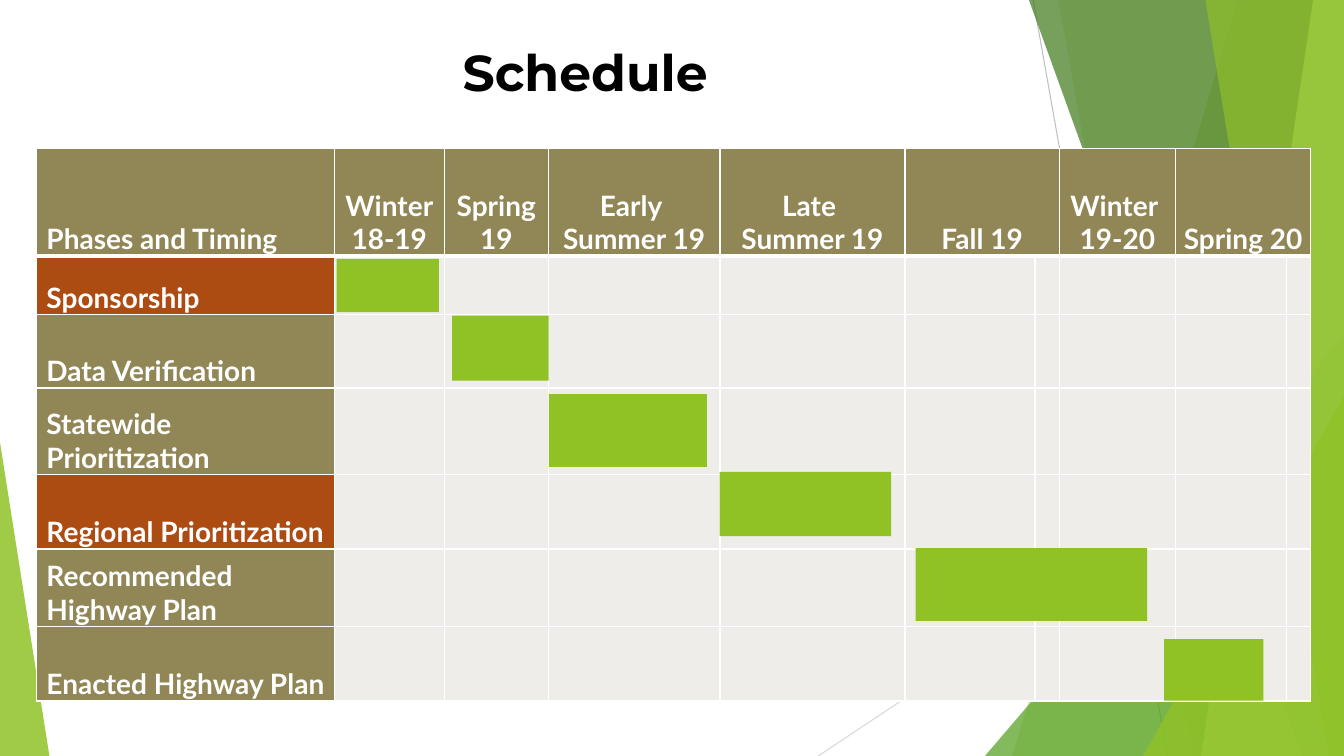
import pptx
import pptx.util
import pptx.dml.color
import pptx.enum.shapes
import pptx.enum.text
import pptx.oxml
import pptx.oxml.ns

Pt = pptx.util.Pt
qn = pptx.oxml.ns.qn
KIND = pptx.enum.shapes.MSO_SHAPE
WIRE = pptx.enum.shapes.MSO_CONNECTOR
ALIGN = pptx.enum.text.PP_ALIGN
ANCHOR = pptx.enum.text.MSO_ANCHOR
FIT = pptx.enum.text.MSO_AUTO_SIZE

WIDE, HIGH = 960, 540
HUES = {
    "ink": "000000", "white": "FFFFFF", "green": "90C226", "leaf": "54A021",
    "moss": "3F7819", "lime": "C0E474", "olive": "918655", "rust": "AD4C12",
    "pale": "EEEDE9", "gray": "BFBFBF", "mist": "D9D9D9",
}
TITLE = {"name": "Montserrat", "size": Pt(36), "bold": True}
LABEL = {"name": "Lato", "size": Pt(20), "bold": True}
LEFT = {"margin_left": Pt(7.2), "margin_right": Pt(0.7)}
MID = {"margin_left": Pt(1.4), "margin_right": Pt(1.4)}
CELL = {"margin_top": Pt(0.7), "margin_bottom": 0, "vertical_anchor": ANCHOR.BOTTOM}

COLS = [212.8, 78.6, 74.3, 122.6, 132.2, 92.9, 5, 83.2, 79.2, 4.8]
ROWS = [76.8, 42, 52.4, 61.8, 53.2, 55.4, 53.2]
HEADS = {
    0: "Phases and Timing", 1: "Winter\n18-19", 2: "Spring 19",
    3: "Early \vSummer 19", 4: "Late \vSummer 19", 5: "Fall 19",
    7: "Winter \v19-20", 8: "Spring 20",
}
PHASES = [
    ("Sponsorship", "rust"), ("Data Verification", "olive"),
    ("Statewide Prioritization", "olive"), ("Regional Prioritization", "rust"),
    ("Recommended Highway Plan", "olive"), ("Enacted Highway Plan", "olive"),
]
# Left, top, width and height of each bar, from the table corner
BARS = [
    (214.5, 79, 73, 38), (297, 119.5, 69, 46.5), (366, 175.5, 113, 52),
    (488, 231, 122.5, 46), (628, 285.5, 165.5, 52), (805.5, 350.5, 71, 44),
]


def put(obj, vals):
    for key, val in vals.items():
        setattr(obj, key, val)


def tint(hue):
    return pptx.dml.color.RGBColor.from_string(HUES[hue])


def style(frame, font, hue, align):
    for para in frame.paragraphs:
        para.alignment = align
        for run in para.runs:
            put(run.font, font)
            run.font.color.rgb = tint(hue)


def paint(shape, hue, alpha=100):
    shape.shadow.inherit = False
    shape.fill.solid()
    shape.fill.fore_color.rgb = tint(hue)
    shape.line.fill.background()
    if alpha < 100:
        node = shape._element.spPr.find(".//" + qn("a:srgbClr"))
        pptx.oxml.ns  # namespace helpers
        mark = pptx.oxml.parse_xml(
            f'<a:alpha {pptx.oxml.ns.nsdecls("a")} val="{alpha * 1000}"/>')
        node.append(mark)


def block(slide, kind, box):
    return slide.shapes.add_shape(kind, *[Pt(v) for v in box])


def band(slide, box, top, foot, hue, alpha):
    """Slanted strip from its left edge to the right side of the box."""
    x, y, w, h = box
    pen = slide.shapes.build_freeform(x + top, y, scale=Pt(1))
    pen.add_line_segments([(x + w, y), (x + w, y + h), (x + foot, y + h)])
    paint(pen.convert_to_shape(), hue, alpha)


def wedge(slide, box, left, top, wide, tip, hue, alpha):
    """Right triangle standing on the foot of the box."""
    x, y, w, h = box
    shape = block(slide, KIND.ISOSCELES_TRIANGLE, (x + left, y + top, wide, h - top))
    shape.adjustments[0] = tip
    paint(shape, hue, alpha)


def wire(slide, box, ends, hue):
    x, y = box[:2]
    x1, y1, x2, y2 = ends
    line = slide.shapes.add_connector(
        WIRE.STRAIGHT, Pt(x + x1), Pt(y + y1), Pt(x + x2), Pt(y + y2))
    line.line.color.rgb = tint(hue)
    line.line.width = Pt(0.75)
    line._element.spPr.append(pptx.oxml.parse_xml(
        f'<a:effectLst {pptx.oxml.ns.nsdecls("a")}/>'))


def decor(slide, box):
    wire(slide, box, (738, 0, 834, 540), "gray")
    wire(slide, box, (960, 290, 584.5, 540), "mist")
    band(slide, box, 884, 723, "green", 30)
    band(slide, box, 756, 852, "green", 20)
    wedge(slide, box, 703.5, 240, 256.5, 1, "leaf", 72)
    band(slide, box, 735, 929.5, "moss", 70)
    band(slide, box, 938, 858.5, "lime", 70)
    band(slide, box, 861, 949, "green", 65)
    wedge(slide, box, 816.5, 283, 143.5, 1, "green", 80)
    wedge(slide, box, 0, 316, 35.3, 0, "green", 85)


def head(slide, box):
    title = slide.shapes.title
    put(title, dict(zip(("left", "top", "width", "height"), map(Pt, box))))
    frame = title.text_frame
    frame.text = "Schedule"
    put(frame, {"word_wrap": True, "auto_size": FIT.NONE,
                "vertical_anchor": ANCHOR.MIDDLE})
    style(frame, TITLE, "ink", ALIGN.LEFT)


def edge(cell, row):
    """White rules, heavier under the header row."""
    props = cell._tc.get_or_add_tcPr()
    wide = {"lnT": 3 if row == 1 else 1, "lnB": 3 if row == 0 else 1}
    for spot, side in enumerate(("lnL", "lnR", "lnT", "lnB")):
        props.insert(spot, pptx.oxml.parse_xml(
            f'<a:{side} {pptx.oxml.ns.nsdecls("a")} w="{Pt(wide.get(side, 1))}">'
            f'<a:solidFill><a:srgbClr val="{HUES["white"]}"/></a:solidFill></a:{side}>'))


def label(cell, text, col):
    put(cell, {**CELL, **(MID if col else LEFT)})
    cell.text_frame.text = text
    style(cell.text_frame, LABEL, "white", ALIGN.CENTER if col else ALIGN.LEFT)


def chart(slide, box):
    # Grid
    x, y = box
    grid = slide.shapes.add_table(
        len(ROWS), len(COLS), Pt(x), Pt(y), Pt(sum(COLS)), Pt(sum(ROWS))).table
    put(grid, {"first_row": False, "horz_banding": False})
    for col, wide in zip(grid.columns, COLS):
        col.width = Pt(wide)
    for row, high in zip(grid.rows, ROWS):
        row.height = Pt(high)
    for r in range(len(ROWS)):
        for c in range(len(COLS)):
            cell = grid.cell(r, c)
            hue = "olive" if r == 0 else "pale" if c else PHASES[r - 1][1]
            cell.fill.solid()
            cell.fill.fore_color.rgb = tint(hue)
            edge(cell, r)
    # Season and phase names
    for c in (5, 8):
        grid.cell(0, c).merge(grid.cell(0, c + 1))
    for c, text in HEADS.items():
        label(grid.cell(0, c), text, c)
    for r, (text, _) in enumerate(PHASES, 1):
        label(grid.cell(r, 0), text, 0)
    # Time bars
    for left, top, wide, high in BARS:
        paint(block(slide, KIND.RECTANGLE, (x + left, y + top, wide, high)), "green")


def main():
    deck = pptx.Presentation()
    put(deck, {"slide_width": Pt(WIDE), "slide_height": Pt(HIGH)})
    slide = deck.slides.add_slide(deck.slide_layouts[5])
    decor(slide, (0, 0, WIDE, HIGH))
    head(slide, (323.3, 25.2, 331.2, 51.1))
    chart(slide, (26, 106))
    deck.save("out.pptx")


if __name__ == "__main__":
    main()
